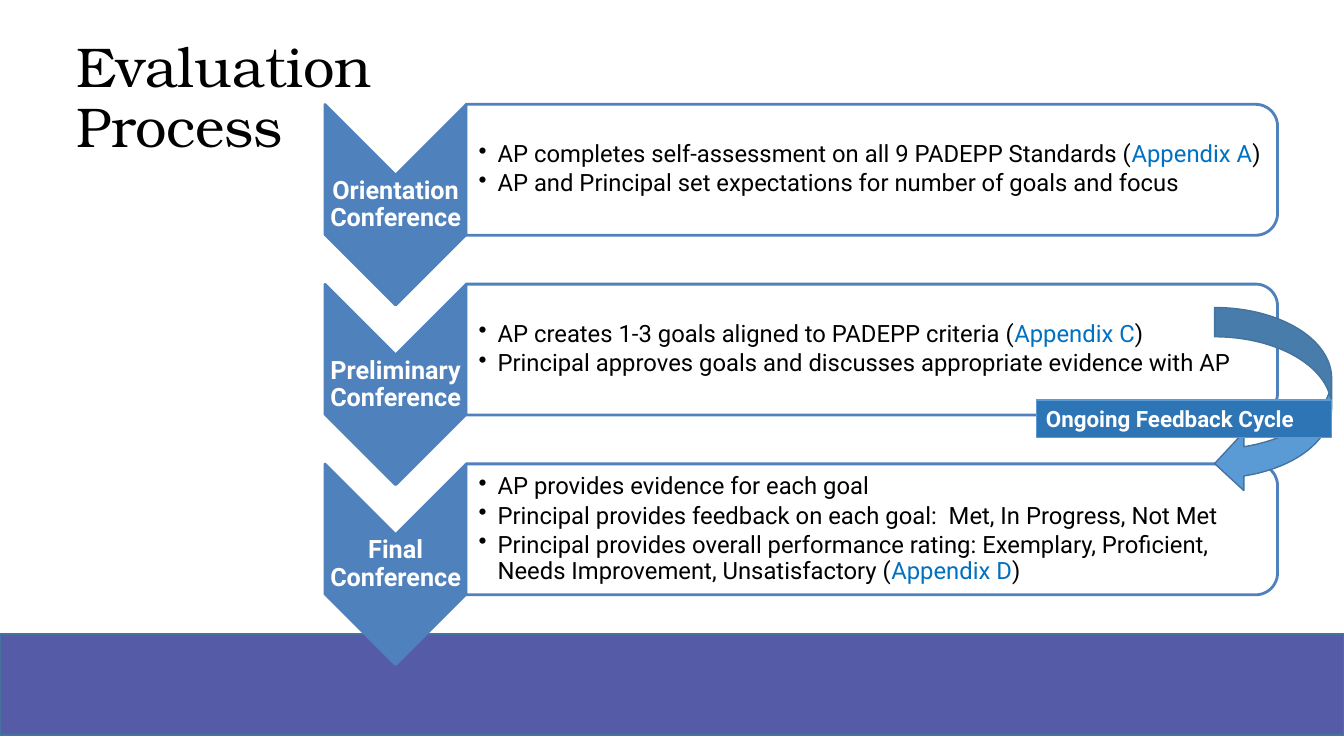
import dataclasses

import lxml.etree
import pptx
import pptx.dml.color
import pptx.enum.shapes
import pptx.enum.text
import pptx.oxml.ns
import pptx.util

Cm = pptx.util.Cm
Pt = pptx.util.Pt
SHAPES = pptx.enum.shapes.MSO_SHAPE
ALIGN = pptx.enum.text.PP_ALIGN
ANCHOR = pptx.enum.text.MSO_ANCHOR
qn = pptx.oxml.ns.qn

COLOURS = {
    "band": "565BA7", "edge": "43739E", "stage": "4F81BD", "arrow": "5B9BD5",
    "feedback": "2E75B6", "link": "0070C0", "black": "000000", "white": "FFFFFF",
}
BODY_FONT = "Roboto"
TITLE_FONT = "TeX Gyre Bonum"
STAGE_PITCH = 4.53
CHEVRON_X, CHEVRON_Y = 9.97, 5.16
PANEL_X, PANEL_Y = 21.97, 4.28


@dataclasses.dataclass(frozen=True)
class Area:
    left: float
    top: float
    width: float
    height: float


@dataclasses.dataclass(frozen=True)
class Bullet:
    text: str
    appendix: str = ""


@dataclasses.dataclass(frozen=True)
class Stage:
    label: str
    bullets: tuple[Bullet, ...]


STAGES = (
    Stage("Orientation Conference", (
        Bullet("AP completes self-assessment on all 9 PADEPP Standards", "Appendix A"),
        Bullet("AP and Principal set expectations for number of goals and focus"),
    )),
    Stage("Preliminary Conference", (
        Bullet("AP creates 1-3 goals aligned to PADEPP criteria", "Appendix C"),
        Bullet("Principal approves goals and discusses appropriate evidence with AP"),
    )),
    Stage("Final Conference", (
        Bullet("AP provides evidence for each goal"),
        Bullet("Principal provides feedback on each goal:  Met, In Progress, Not Met"),
        Bullet("Principal provides overall performance rating: Exemplary, Proficient, "
               "Needs Improvement, Unsatisfactory", "Appendix D"),
    )),
)


def colour(name: str) -> pptx.dml.color.RGBColor:
    return pptx.dml.color.RGBColor.from_string(COLOURS[name])


def centred(x: float, y: float, width: float, height: float) -> Area:
    return Area(x - width / 2, y - height / 2, width, height)


def place(area: Area) -> tuple:
    return Cm(area.left), Cm(area.top), Cm(area.width), Cm(area.height)


def add_shape(slide, kind, area: Area, fill: str, line: str, weight: float, rotation: float = 0):
    shape = slide.shapes.add_shape(kind, *place(area))
    shape.shadow.inherit = False
    shape.rotation = rotation
    shape.fill.solid()
    shape.fill.fore_color.rgb = colour(fill)
    shape.line.color.rgb = colour(line)
    shape.line.width = Pt(weight)
    return shape


def add_text_frame(slide, area: Area, left_inset: float, inset: float):
    frame = slide.shapes.add_textbox(*place(area)).text_frame
    frame.word_wrap = True
    frame.vertical_anchor = ANCHOR.MIDDLE
    frame.margin_left = Cm(left_inset)
    frame.margin_top = frame.margin_right = frame.margin_bottom = Cm(inset)
    return frame


def style(paragraph, size: float, tint: str, bold: bool = False, font: str = BODY_FONT) -> None:
    paragraph.font.name = font
    paragraph.font.size = Pt(size)
    paragraph.font.bold = bold
    paragraph.font.color.rgb = colour(tint)


def add_title(slide) -> None:
    frame = add_text_frame(slide, Area(1.68, 0.86, 30.48, 3.3), 0.25, 0.13)
    paragraph = frame.paragraphs[0]
    paragraph.text = "Evaluation\vProcess"
    paragraph.line_spacing = 0.9
    style(paragraph, 40, "black", font=TITLE_FONT)


def write_bullet(paragraph, bullet: Bullet) -> None:
    properties = paragraph._p.get_or_add_pPr()
    properties.set("marL", str(Cm(0.48)))
    properties.set("indent", str(Cm(-0.48)))
    lxml.etree.SubElement(properties, qn("a:buChar")).set("char", "•")
    paragraph.line_spacing = 0.9
    paragraph.space_after = Pt(2.55)
    style(paragraph, 17, "black")
    if bullet.appendix:
        paragraph.add_run().text = f"{bullet.text} ("
        link = paragraph.add_run()
        link.text = bullet.appendix
        link.font.color.rgb = colour("link")
        paragraph.add_run().text = ")"
    else:
        paragraph.add_run().text = bullet.text


def add_stage(slide, stage: Stage, offset: float) -> None:
    chevron_y = CHEVRON_Y + offset
    panel_y = PANEL_Y + offset
    add_shape(slide, SHAPES.CHEVRON, centred(CHEVRON_X, chevron_y, 5.05, 3.56),
              "stage", "stage", 2, 90)
    frame = add_text_frame(slide, centred(CHEVRON_X, chevron_y, 3.56, 1.52), 0.03, 0.03)
    label = frame.paragraphs[0]
    label.text = stage.label
    label.alignment = ALIGN.CENTER
    label.line_spacing = 0.9
    style(label, 18, "white", True)

    panel = add_shape(slide, SHAPES.ROUND_2_SAME_RECTANGLE,
                      centred(PANEL_X, panel_y, 3.3, 20.45), "white", "stage", 2, 90)
    fill_colour = panel._element.spPr.find(qn("a:solidFill"))[0]
    lxml.etree.SubElement(fill_colour, qn("a:alpha")).set("val", "90000")
    frame = add_text_frame(slide, Area(11.73, panel_y - 1.49, 20.3, 2.97), 0.33, 0.03)
    for number, bullet in enumerate(stage.bullets):
        paragraph = frame.add_paragraph() if number else frame.paragraphs[0]
        write_bullet(paragraph, bullet)


def add_feedback_cycle(slide) -> None:
    add_shape(slide, SHAPES.CURVED_LEFT_ARROW, Area(30.61, 7.75, 2.95, 4.67),
              "arrow", "edge", 1)
    banner = add_shape(slide, SHAPES.RECTANGLE, Area(26.11, 10.08, 7.44, 0.94),
                       "feedback", "arrow", 0.75)
    banner.text_frame.word_wrap = True
    banner.text_frame.vertical_anchor = ANCHOR.TOP
    paragraph = banner.text_frame.paragraphs[0]
    paragraph.text = "Ongoing Feedback Cycle"
    paragraph.alignment = ALIGN.LEFT
    style(paragraph, 16, "white", True)


def main() -> None:
    presentation = pptx.Presentation()
    presentation.slide_width = Cm(33.87)
    presentation.slide_height = Cm(19.05)
    slide = presentation.slides.add_slide(presentation.slide_layouts[6])
    add_shape(slide, SHAPES.RECTANGLE, Area(0, 15.98, 33.87, 2.54), "band", "edge", 1)
    add_title(slide)
    for number, stage in enumerate(STAGES):
        add_stage(slide, stage, number * STAGE_PITCH)
    add_feedback_cycle(slide)
    presentation.save("out.pptx")


if __name__ == "__main__":
    main()
